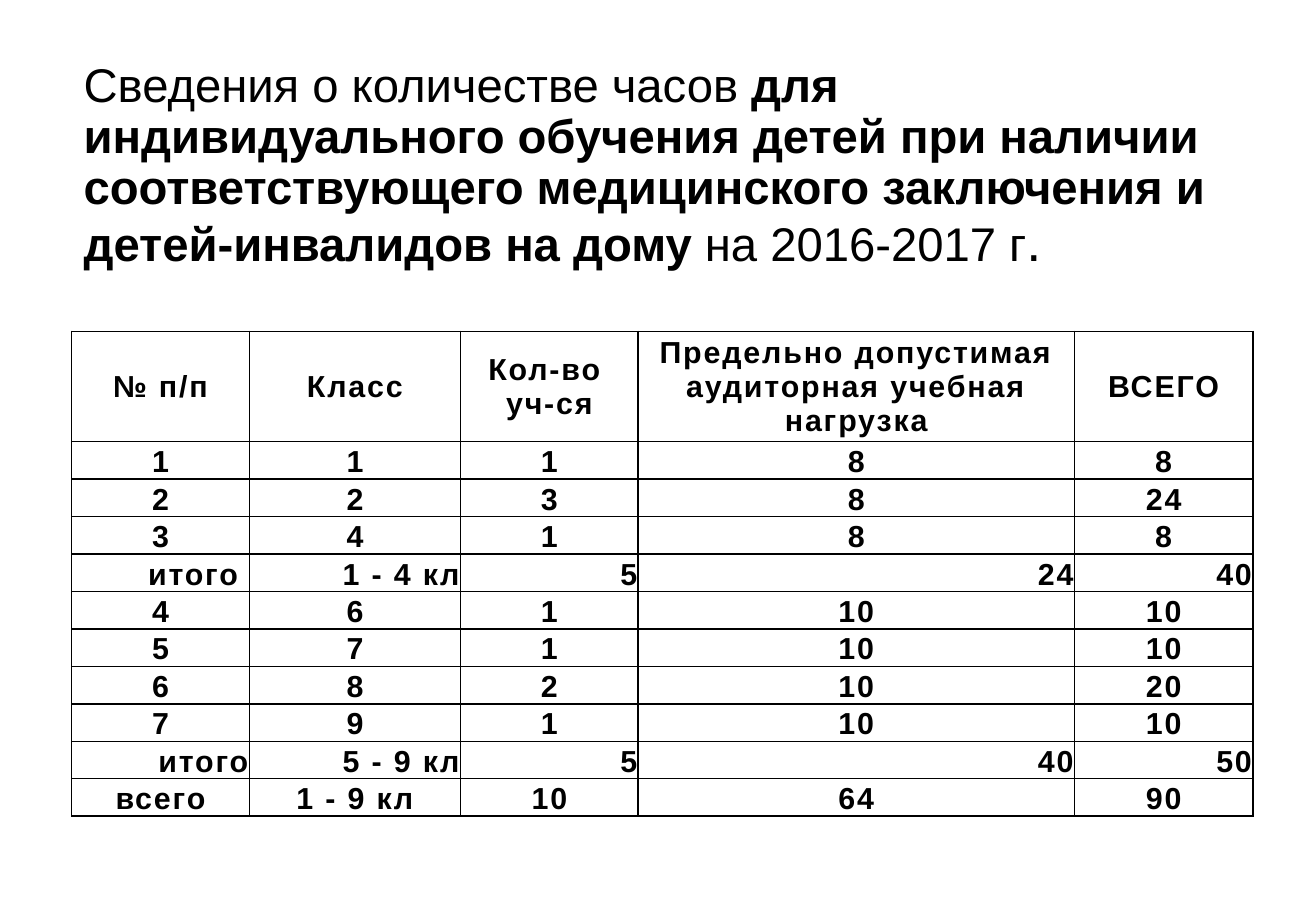
from dataclasses import dataclass

from lxml import etree
from pptx import Presentation
from pptx.dml.color import RGBColor
from pptx.enum.text import MSO_ANCHOR, PP_ALIGN
from pptx.oxml.ns import qn
from pptx.slide import Slide
from pptx.table import _Cell
from pptx.text.text import _Paragraph
from pptx.util import Cm, Pt

MIDDLE, BOTTOM = MSO_ANCHOR.MIDDLE, MSO_ANCHOR.BOTTOM
CENTER, RIGHT, LEFT = PP_ALIGN.CENTER, PP_ALIGN.RIGHT, PP_ALIGN.LEFT

COLORS = {"text": "000000", "border": "000000"}
FONT = "Arial"
COLUMN_WIDTHS = (3.71, 4.42, 3.71, 9.12, 3.73)
HEADER_HEIGHT = 2.15
ROW_HEIGHT = 0.73
BORDER_WIDTH = Pt(1)


@dataclass(frozen=True)
class TitleSpan:
    text: str
    size: int = 28
    bold: bool = False


@dataclass(frozen=True)
class HoursRow:
    values: tuple[str, ...]
    align: PP_ALIGN = CENTER
    anchor: MSO_ANCHOR = BOTTOM
    height: float = ROW_HEIGHT


TITLE = (
    TitleSpan("Сведения о количестве часов "),
    TitleSpan(
        "для индивидуального обучения детей при наличии соответствующего "
        "медицинского заключения и детей-инвалидов на дому",
        bold=True,
    ),
    TitleSpan(" на 2016-2017 г"),
    TitleSpan(".", size=32),
)

ROWS = (
    HoursRow(
        ("№ п/п", "Класс", "Кол-во \nуч-ся",
         "Предельно допустимая аудиторная учебная нагрузка", "ВСЕГО"),
        anchor=MIDDLE, height=HEADER_HEIGHT,
    ),
    HoursRow(("1", "1", "1", "8", "8")),
    HoursRow(("2", "2", "3", "8", "24")),
    HoursRow(("3", "4", "1", "8", "8")),
    HoursRow(("итого ", "1 - 4 кл", "5", "24", "40"), align=RIGHT),
    HoursRow(("4", "6", "1", "10", "10")),
    HoursRow(("5", "7", "1", "10", "10")),
    HoursRow(("6", "8", "2", "10", "20")),
    HoursRow(("7", "9", "1", "10", "10")),
    HoursRow(("итого", "5 - 9 кл", "5", "40", "50"), align=RIGHT),
    HoursRow(("всего", "1 - 9 кл", "10", "64", "90")),
)


def add_span(para: _Paragraph, text: str, *, size: int = 18,
             bold: bool = False, spacing: int = 0) -> None:
    """Append formatted text; spacing is in hundredths of a point."""
    span = para.add_run()
    span.text = text
    span.font.name = FONT
    span.font.size = Pt(size)
    span.font.bold = bold
    span.font.color.rgb = RGBColor.from_string(COLORS["text"])
    if spacing:
        span.font._element.set("spc", str(spacing))


def add_borders(cell: _Cell) -> None:
    properties = cell._tc.get_or_add_tcPr()
    for side in ("a:lnL", "a:lnR", "a:lnT", "a:lnB"):
        line = etree.SubElement(properties, qn(side), w=str(BORDER_WIDTH))
        fill = etree.SubElement(line, qn("a:solidFill"))
        etree.SubElement(fill, qn("a:srgbClr"), val=COLORS["border"])


def fill_cell(cell: _Cell, text: str, row: HoursRow) -> None:
    add_borders(cell)
    cell.fill.background()
    cell.vertical_anchor = row.anchor
    cell.margin_left = cell.margin_right = cell.margin_top = Cm(0.02)
    cell.margin_bottom = 0
    for index, line in enumerate(text.split("\n")):
        frame = cell.text_frame
        para = frame.add_paragraph() if index else frame.paragraphs[0]
        para.alignment = row.align
        add_span(para, line, bold=True, spacing=110)


def add_title(page: Slide) -> None:
    box = page.shapes.add_textbox(Cm(1.5), Cm(1.02), Cm(25.17), Cm(4.95))
    frame = box.text_frame
    frame.word_wrap = True
    frame.vertical_anchor = MIDDLE
    para = frame.paragraphs[0]
    para.alignment = LEFT
    para.line_spacing = 0.9
    for span in TITLE:
        add_span(para, span.text, size=span.size, bold=span.bold)


def add_hours_table(page: Slide) -> None:
    table = page.shapes.add_table(
        len(ROWS), len(COLUMN_WIDTHS), Cm(1.5), Cm(6.93),
        Cm(sum(COLUMN_WIDTHS)), Cm(sum(row.height for row in ROWS)),
    ).table
    table.first_row = table.horz_banding = False
    for column, width in zip(table.columns, COLUMN_WIDTHS):
        column.width = Cm(width)
    for table_row, row in zip(table.rows, ROWS):
        table_row.height = Cm(row.height)
        for cell, text in zip(table_row.cells, row.values):
            fill_cell(cell, text, row)


def main() -> None:
    deck = Presentation()
    deck.slide_width, deck.slide_height = Cm(27.51), Cm(19.05)
    page = deck.slides.add_slide(deck.slide_layouts[6])
    add_title(page)
    add_hours_table(page)
    deck.save("out.pptx")


if __name__ == "__main__":
    main()
